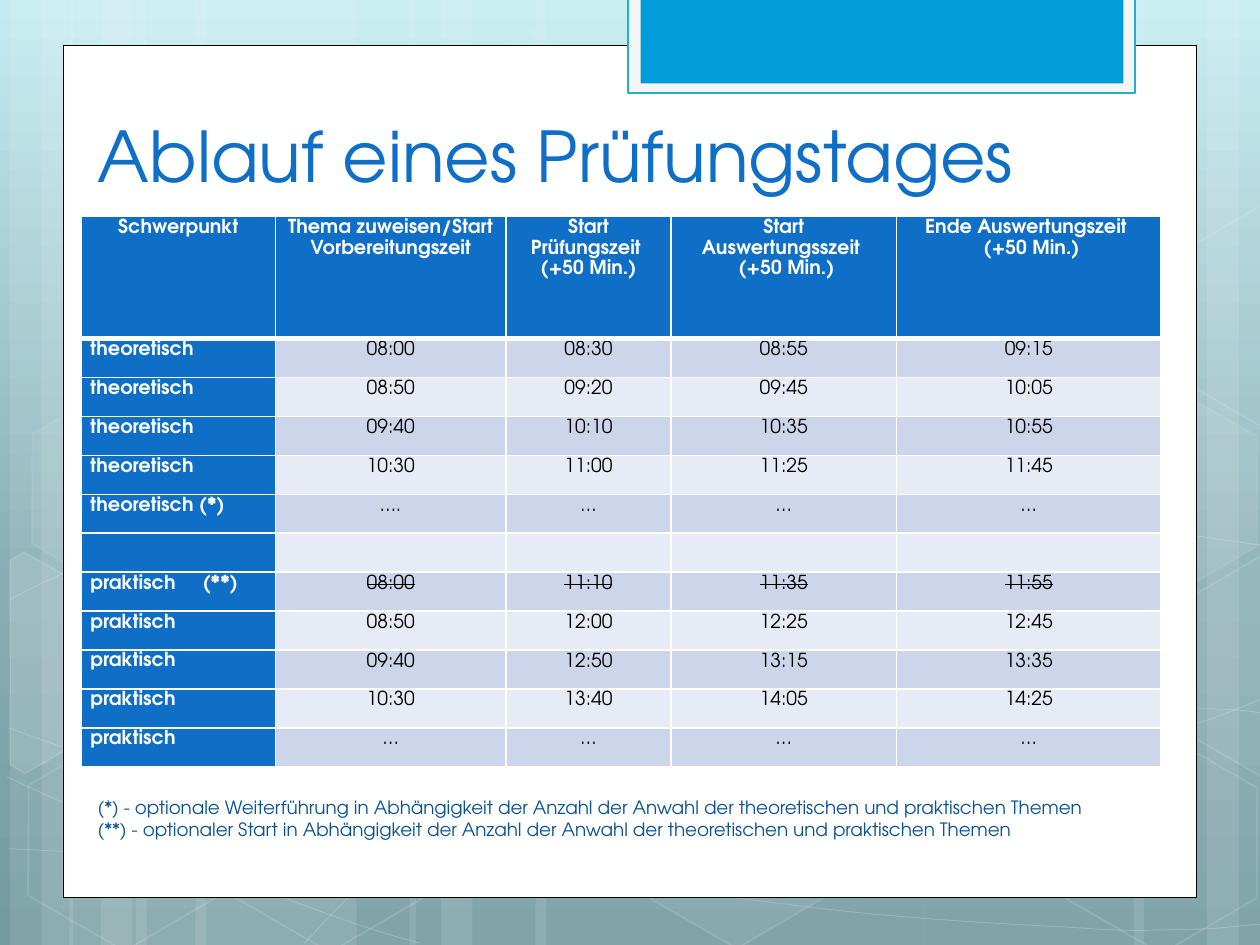
from copy import deepcopy

from pptx import Presentation
from pptx.dml.color import RGBColor
from pptx.enum.shapes import MSO_SHAPE as Shape
from pptx.enum.text import MSO_ANCHOR as Anchor, MSO_AUTO_SIZE as AutoSize, PP_ALIGN as Align
from pptx.oxml import parse_xml
from pptx.oxml.ns import nsdecls, qn
from pptx.util import Pt

FONT = "TeX Gyre Adventor"
BLUE, WHITE, BLACK = "0F6FC6", "FFFFFF", "000000"
BANDS = ("CCD5EA", "E7EBF5")
HARD_SPACE = chr(160)

TITLE = "Ablauf eines Prüfungstages"
HEADER = ("Schwerpunkt", "Thema zuweisen/Start Vorbereitungszeit",
          "Start Prüfungszeit \n(+50 Min.)",
          f"Start Auswertungsszeit{HARD_SPACE}\n (+50 Min.)",
          f"Ende Auswertungszeit{HARD_SPACE}\n (+50 Min.)")
SCHEDULE = [
    ("theoretisch", "08:00", "08:30", "08:55", "09:15"),
    ("theoretisch", "08:50", "09:20", "09:45", "10:05"),
    ("theoretisch", "09:40", "10:10", "10:35", "10:55"),
    ("theoretisch", "10:30", "11:00", "11:25", "11:45"),
    ("theoretisch (*)", "….", "…", "…", "…"),
    ("", "", "", "", ""),
    (f"praktisch{HARD_SPACE * 5}(**)", "08:00", "11:10", "11:35", "11:55"),
    ("praktisch", "08:50", "12:00", "12:25", "12:45"),
    ("praktisch", "09:40", "12:50", "13:15", "13:35"),
    ("praktisch", "10:30", "13:40", "14:05", "14:25"),
    ("praktisch", "…", "…", "…", "…"),
]
STRUCK_ROW = 7
COLUMN_WIDTHS = (110.9, 131.8, 94.3, 128.9, 151.2)
HEADER_HEIGHT, ROW_HEIGHT = 69.6, 22.27
NOTES = (
    "(*) - optionale Weiterführung in Abhängigkeit der Anzahl der Anwahl der theoretischen und praktischen Themen",
    "(**) - optionaler Start in Abhängigkeit der Anzahl der Anwahl der theoretischen und praktischen Themen",
)

BACKGROUND = ((0, "C4EBF1"), (0.62, "88ADB3"), (1, "749AA0"))
# left, width
STRIPES = [(77.8, 126), (5.8, 36), (23.8, 60), (111.6, 126), (39.6, 36), (57.6, 60),
           (527.8, 126), (689.8, 36), (648, 60), (306, 222), (234, 36), (252, 60)]
# start point, then Bézier segments of two control points and an end point
CURVES = [
    ((5, 485), [(44, 487, 83, 489, 137, 488), (191, 487, 258, 486, 330, 479),
                (402, 472, 504, 458, 570, 444), (636, 431, 703, 409, 725, 397)]),
    ((5, 343), [(26, 332, 47, 321, 87, 310), (128, 300, 186, 284, 250, 279),
                (314, 274, 392, 273, 471, 279), (550, 284, 682, 307, 725, 312)]),
    ((4, 444), [(91, 484, 178, 523, 240, 539)]),
    ((5, 416), [(27, 424, 50, 432, 92, 444), (134, 454, 197, 472, 257, 485),
                (317, 497, 392, 510, 452, 517), (512, 525, 576, 528, 614, 530),
                (652, 533, 662, 531, 680, 531), (699, 531, 712, 528, 725, 528)]),
    ((174, 539), [(187, 525, 200, 510, 217, 498), (235, 485, 259, 470, 279, 460),
                  (300, 450, 312, 446, 338, 438), (364, 431, 413, 421, 438, 416),
                  (464, 411, 467, 411, 490, 410), (512, 408, 547, 405, 572, 405),
                  (597, 404, 638, 405, 638, 405), (654, 405, 670, 405, 686, 405),
                  (699, 405, 711, 406, 718, 407), (724, 408, 722, 407, 724, 408)]),
]
# left, top, fill opacity, line opacity
HEXAGONS = [(240.5, 25.9, 4, 8), (357.8, 424.1, 6, 12), (7.9, 425.5, 0, 12),
            (10.1, 224.6, 7, 8), (125.3, 426.2, 0, 12), (542.2, 326.2, 10, 12),
            (600.5, 427, 0, 12), (600.5, 226.1, 7, 8)]
# fill opacity, corner points
CUT_HEXAGONS = [
    (10, [(5.8, 320.4), (13.7, 315.4), (69.1, 347), (68.4, 410.4), (14.4, 442.1), (5.8, 437)]),
    (4, [(666.7, 349.2), (720.7, 317.5), (726.5, 321.1), (726.5, 441.4), (721.4, 444.2), (666.7, 412.6)]),
    (0, [(666.7, 149), (720.7, 117.4), (727.2, 121), (726.5, 241.2), (721.4, 244.1), (666.7, 212.4)]),
]
# box, fill, line colour, line width
PANELS = [((36, 25.9, 648, 487.1), WHITE, BLACK, 0.5),
          ((359, -1.4, 289.6, 54.7), "F5F5F5", "21B2C9", 1.25),
          ((366, -1.4, 276, 49), "009DD9", None, 0)]


def rgb(value):
    return RGBColor.from_string(value)


def points(*values):
    return [Pt(value) for value in values]


def set_opacity(color_format, percent):
    color = color_format._xFill.find(qn("a:srgbClr"))
    color.append(parse_xml(f'<a:alpha {nsdecls("a")} val="{percent * 1000}"/>'))


def paint(shape, fill=None, line=None, width=1, fill_opacity=100, line_opacity=100):
    shape.shadow.inherit = False
    for target, color, opacity in ((shape.fill, fill, fill_opacity),
                                   (shape.line.fill, line, line_opacity)):
        if color is None or opacity == 0:
            target.background()
            continue
        target.solid()
        target.fore_color.rgb = rgb(color)
        if opacity < 100:
            set_opacity(target.fore_color, opacity)
    if line:
        shape.line.width = Pt(width)


def add_outline(shapes, corners, close):
    first, *rest = [points(*corner) for corner in corners]
    builder = shapes.build_freeform(*first)
    builder.add_line_segments(rest, close=close)
    return builder.convert_to_shape()


def add_curve(shapes, start, segments):
    """Draw the control polygon, then turn each three of its lines into one Bézier segment."""
    corners = [start] + [segment[i:i + 2] for segment in segments for i in (0, 2, 4)]
    shape = add_outline(shapes, corners, False)
    lines = list(shape.element.iter(qn("a:lnTo")))
    for i in range(0, len(lines), 3):
        bezier = parse_xml(f'<a:cubicBezTo {nsdecls("a")}/>')
        lines[i].addprevious(bezier)
        for line in lines[i:i + 3]:
            bezier.append(line[0])
            line.getparent().remove(line)
    return shape


def format_text(text_frame, size, color, align=None, spacing=None, **font_values):
    values = {"name": FONT, "size": Pt(size), **font_values}
    for paragraph in text_frame.paragraphs:
        paragraph.alignment = align
        paragraph.line_spacing = spacing
        for run in paragraph.runs:
            run.font.color.rgb = rgb(color)
            for name, value in values.items():
                setattr(run.font, name, value)


def set_background(slide):
    fill = slide.background.fill
    fill.gradient()
    fill.gradient_angle = 270
    stop_list = slide.element.find(".//" + qn("a:gsLst"))
    stop_list.append(deepcopy(stop_list[-1]))
    for stop, (position, color) in zip(fill.gradient_stops, BACKGROUND):
        stop.position = position
        stop.color.rgb = rgb(color)


def add_decoration(shapes):
    for left, width in STRIPES:
        stripe = shapes.add_shape(Shape.RECTANGLE, *points(left, 0, width, 540))
        paint(stripe, WHITE, fill_opacity=10)
    for start, segments in CURVES:
        paint(add_curve(shapes, start, segments), line=WHITE, width=0.5, line_opacity=20)
    for left, top, fill_opacity, line_opacity in HEXAGONS:
        hexagon = shapes.add_shape(Shape.HEXAGON, *points(left, top, 126, 109.4))
        hexagon.adjustments[0] = 0.285
        hexagon.rotation = 30
        paint(hexagon, WHITE, WHITE, 1, fill_opacity, line_opacity)
    for opacity, corners in CUT_HEXAGONS:
        paint(add_outline(shapes, corners, True), WHITE, WHITE, 1, opacity, 12)
    for box, fill, line, width in PANELS:
        paint(shapes.add_shape(Shape.RECTANGLE, *points(*box)), fill, line, width)


def set_borders(cell, row):
    properties = cell._tc.get_or_add_tcPr()
    thick = {0: "B", 1: "T"}.get(row)
    for side in "LRTB":
        width = Pt(3 if side == thick else 1)
        properties.append(parse_xml(
            f'<a:ln{side} {nsdecls("a")} w="{width}"><a:solidFill>'
            f'<a:srgbClr val="{WHITE}"/></a:solidFill></a:ln{side}>'))


def add_schedule(shapes):
    rows = [HEADER, *SCHEDULE]
    height = HEADER_HEIGHT + ROW_HEIGHT * len(SCHEDULE)
    box = points(46.5, 123.84, sum(COLUMN_WIDTHS), height)
    table = shapes.add_table(len(rows), len(HEADER), *box).table
    for column, width in zip(table.columns, COLUMN_WIDTHS):
        column.width = Pt(width)
    for r, texts in enumerate(rows):
        table.rows[r].height = Pt(ROW_HEIGHT if r else HEADER_HEIGHT)
        for c, text in enumerate(texts):
            cell = table.cell(r, c)
            cell.margin_left = cell.margin_right = Pt(5.2)
            cell.margin_top = cell.margin_bottom = 0
            set_borders(cell, r)
            heading = r == 0 or c == 0
            cell.fill.solid()
            cell.fill.fore_color.rgb = rgb(BLUE if heading else BANDS[(r - 1) % 2])
            if not text:
                continue
            cell.text_frame.text = text
            align = Align.JUSTIFY if r and c == 0 else Align.CENTER
            format_text(cell.text_frame, 11, WHITE if heading else BLACK, align, 1.15, bold=heading)
            if r == STRUCK_ROW and c:
                cell.text_frame.paragraphs[0].runs[0].font._element.set("strike", "sngStrike")


def main():
    presentation = Presentation()
    presentation.slide_width, presentation.slide_height = points(720, 540)
    slide = presentation.slides.add_slide(presentation.slide_layouts[5])
    set_background(slide)
    add_decoration(slide.shapes)

    title = slide.shapes.title
    title.element.getparent().append(title.element)
    title.left, title.top, title.width, title.height = points(48.7, 49, 648, 67)
    title.text = TITLE
    title.text_frame.vertical_anchor = Anchor.BOTTOM
    title.text_frame.auto_size = AutoSize.NONE
    format_text(title.text_frame, 40, BLUE, Align.LEFT)

    add_schedule(slide.shapes)

    notes = slide.shapes.add_textbox(*points(48.7, 451.4, 629.3, 32.4)).text_frame
    notes.word_wrap = True
    notes.text = "\n".join(NOTES)
    format_text(notes, 10.5, "0B5394")
    presentation.save("out.pptx")


if __name__ == "__main__":
    main()
